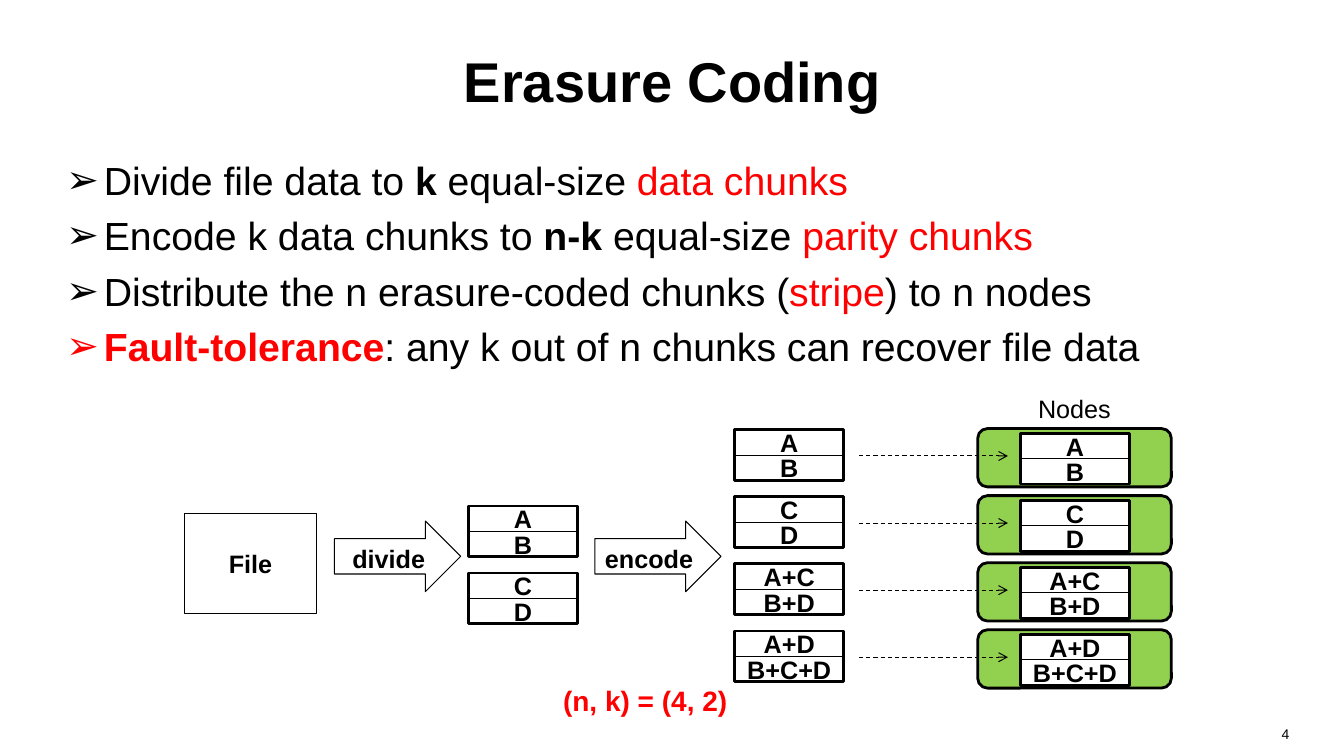
"""Build the Erasure Coding slide."""
from lxml.etree import SubElement
from pptx import Presentation
from pptx.dml.color import RGBColor
from pptx.enum.dml import MSO_LINE as Dash
from pptx.enum.shapes import MSO_CONNECTOR as Link, MSO_SHAPE as Kind
from pptx.enum.text import MSO_ANCHOR as Anchor, PP_ALIGN as Align
from pptx.oxml.ns import qn
from pptx.util import Cm, Pt

rgb = RGBColor.from_string
BLACK, RED, GREEN, WHITE = "000000", "FF0000", "92D050", "FFFFFF"

deck = Presentation()
deck.slide_width, deck.slide_height = Cm(33.87), Cm(19.05)
slide = deck.slides.add_slide(deck.slide_layouts[6])
shapes = slide.shapes


def add_run(para, text, size, color=BLACK, bold=False):
    """Add one styled run to a paragraph."""
    run = para.add_run()
    run.text = text
    font = run.font
    font.name, font.size, font.bold = "Arial", Pt(size), bold
    font.color.rgb = rgb(color)


def add_box(kind, x, y, w, h, fill=None, line=0.75, text="", anchor=Anchor.MIDDLE):
    """Add an outlined shape with an optional bold label."""
    box = shapes.add_shape(kind, Cm(x), Cm(y), Cm(w), Cm(h))
    box.shadow.inherit = False
    if fill:
        box.fill.solid()
        box.fill.fore_color.rgb = rgb(fill)
    else:
        box.fill.background()
    box.line.color.rgb = rgb(BLACK)
    box.line.width = Pt(line)
    if text:
        frame = box.text_frame
        frame.margin_left = frame.margin_right = 0
        if anchor == Anchor.MIDDLE:
            frame.margin_top = frame.margin_bottom = 0
        frame.vertical_anchor = anchor
        para = frame.paragraphs[0]
        para.alignment = Align.CENTER
        add_run(para, text, 18, bold=True)


labels = [
    ("Erasure Coding", 1.7, 0.43, 30.48, 3.18, 40, BLACK, True, Align.CENTER, Anchor.MIDDLE, True),
    ("4", 24.84, 18.16, 7.9, 0.89, 10, BLACK, False, Align.RIGHT, Anchor.TOP, True),
    ("Nodes", 25.91, 9.78, 2.36, 1.02, 18, BLACK, False, Align.LEFT, Anchor.TOP, False),
    ("(n, k) = (4, 2)", 13.94, 17.09, 4.67, 1.12, 20, RED, True, Align.LEFT, Anchor.TOP, False),
]
for text, x, y, w, h, size, color, bold, align, anchor, wrap in labels:
    frame = shapes.add_textbox(Cm(x), Cm(y), Cm(w), Cm(h)).text_frame
    frame.word_wrap = wrap
    frame.vertical_anchor = anchor
    para = frame.paragraphs[0]
    para.alignment = align
    add_run(para, text, size, color, bold)

points = [
    [("Divide file data to ", BLACK, False), ("k ", BLACK, True),
     ("equal-size ", BLACK, False), ("data chunks", RED, False)],
    [("Encode k data chunks to ", BLACK, False), ("n-k", BLACK, True),
     (" equal-size ", BLACK, False), ("parity chunks", RED, False)],
    [("Distribute the n erasure-coded chunks (", BLACK, False),
     ("stripe", RED, False), (") to n nodes", BLACK, False)],
    [("Fault-tolerance", RED, True),
     (": any k out of n chunks can recover file data", BLACK, False)],
]
body = shapes.add_textbox(Cm(1.42), Cm(3.81), Cm(31.88), Cm(5.74)).text_frame
body.word_wrap = True
for i, point in enumerate(points):
    para = body.add_paragraph() if i else body.paragraphs[0]
    para.space_before = Pt(6)
    props = para._p.get_or_add_pPr()
    props.set("marL", str(Cm(0.95)))
    props.set("indent", str(-Cm(0.95)))
    SubElement(props, qn("a:buFont")).set("typeface", "Arial")
    SubElement(props, qn("a:buChar")).set("char", "➢")
    for text, color, bold in point:
        add_run(para, text, 28, color, bold)

add_box(Kind.RECTANGLE, 4.65, 12.93, 3.33, 2.54, text="File")
for x, text in [(8.43, "divide"), (14.99, "encode")]:
    add_box(Kind.RIGHT_ARROW, x, 13.13, 3.18, 1.78, text=text, anchor=Anchor.TOP)

chunks = [("A", "B"), ("C", "D"), ("A+C", "B+D"), ("A+D", "B+C+D")]
STEP, WIDE, HALF = 1.69, 2.74, 0.64

for i in range(len(chunks)):
    add_box(Kind.ROUNDED_RECTANGLE, 24.64, 10.8 + i * STEP, 4.88, 1.47, GREEN, 2)
    y = Cm(11.49 + i * STEP)
    arrow = shapes.add_connector(Link.STRAIGHT, Cm(21.65), y, Cm(25.4), y)
    arrow.line.color.rgb = rgb(BLACK)
    arrow.line.width = Pt(0.75)
    arrow.line.dash_style = Dash.DASH
    SubElement(arrow.line._get_or_add_ln(), qn("a:tailEnd")).set("type", "arrow")
    SubElement(arrow._element.spPr, qn("a:effectLst"))

stacks = [(11.81, 12.75, chunks[:2], None), (18.52, 10.83, chunks, WHITE),
          (25.72, 10.92, chunks, WHITE)]
for x, top, pairs, fill in stacks:
    for i, pair in enumerate(pairs):
        y = top + i * STEP
        for j, text in enumerate(pair):
            add_box(Kind.RECTANGLE, x, y + j * HALF, WIDE, HALF, fill, text=text)
        add_box(Kind.RECTANGLE, x, y, WIDE, 2 * HALF, line=2)

deck.save("out.pptx")
